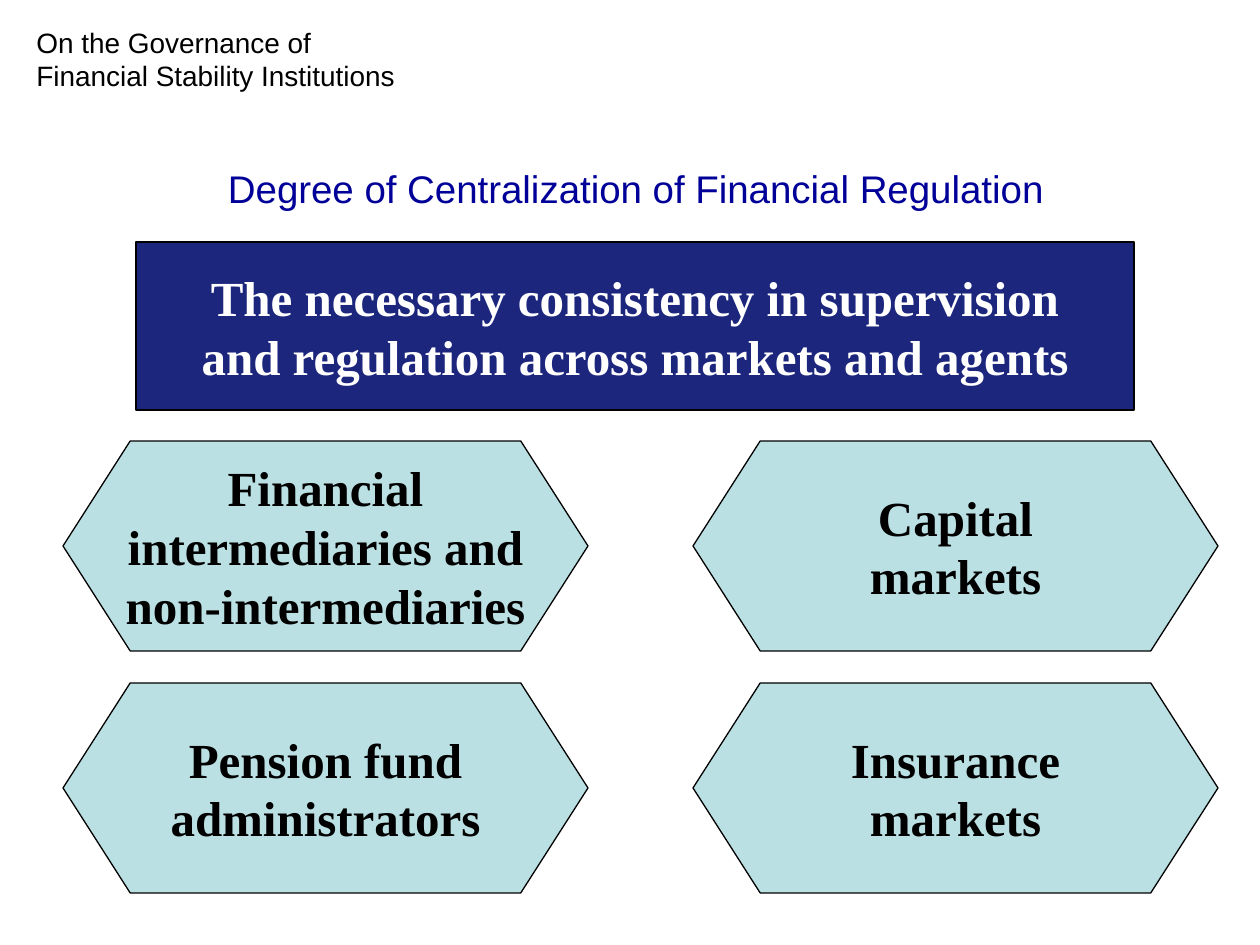
from dataclasses import dataclass

from pptx import Presentation
from pptx.dml.color import RGBColor
from pptx.enum.shapes import MSO_SHAPE
from pptx.enum.text import MSO_ANCHOR, MSO_AUTO_SIZE, PP_ALIGN
from pptx.util import Emu, Pt

EMU_PER_PX = 914400 / 126


@dataclass(frozen=True)
class Theme:
    sans: str = "Arial"
    serif: str = "Times New Roman"
    black: str = "000000"
    white: str = "FFFFFF"
    title: str = "000099"
    banner: str = "1C267D"
    sector: str = "BBE0E3"
    heading_size: int = 16
    title_size: int = 22
    box_size: int = 28
    line_width: float = 0.75


THEME = Theme()

SECTORS = [
    ["Financial\nintermediaries and\nnon-intermediaries", "Capital\nmarkets"],
    ["Pension fund\nadministrators", "Insurance\nmarkets"],
]


def px(n):
    return Emu(round(n * EMU_PER_PX))


def place(sp, box):
    sp.left, sp.top, sp.width, sp.height = map(px, box)


def format_text(tf, font, size, color, align, bold=False):
    for p in tf.paragraphs:
        p.alignment = align
        for r in p.runs:
            r.font.name = font
            r.font.size = Pt(size)
            r.font.bold = bold
            r.font.color.rgb = RGBColor.from_string(color)


def add_heading(slide, box):
    tf = slide.shapes.add_textbox(*map(px, box)).text_frame
    tf.word_wrap = True
    tf.auto_size = MSO_AUTO_SIZE.SHAPE_TO_FIT_TEXT
    tf.text = "On the Governance of Financial Stability Institutions"
    format_text(tf, THEME.sans, THEME.heading_size, THEME.black, PP_ALIGN.LEFT)


def set_title(slide, box):
    title = slide.shapes.title
    place(title, box)
    tf = title.text_frame
    tf.text = "Degree of Centralization of Financial Regulation"
    tf.word_wrap = True
    tf.auto_size = MSO_AUTO_SIZE.NONE
    tf.vertical_anchor = MSO_ANCHOR.BOTTOM
    tf.margin_bottom = px(13)
    format_text(tf, THEME.sans, THEME.title_size, THEME.title, PP_ALIGN.CENTER)


def add_label_box(slide, kind, box, text, fill, color):
    sp = slide.shapes.add_shape(kind, *map(px, box))
    sp.shadow.inherit = False
    sp.fill.solid()
    sp.fill.fore_color.rgb = RGBColor.from_string(fill)
    sp.line.color.rgb = RGBColor.from_string(THEME.black)
    sp.line.width = Pt(THEME.line_width)
    tf = sp.text_frame
    tf.text = text
    tf.word_wrap = False
    tf.vertical_anchor = MSO_ANCHOR.MIDDLE
    format_text(tf, THEME.serif, THEME.box_size, color, PP_ALIGN.CENTER, bold=True)
    return sp


def add_banner(slide, box):
    text = "The necessary consistency in supervision\nand regulation across markets and agents"
    add_label_box(slide, MSO_SHAPE.RECTANGLE, box, text, THEME.banner, THEME.white)


def add_sector_grid(slide, box, gap_x, gap_y):
    """Fill the box with equal hexagons, one for each entry in SECTORS."""
    left, top, width, height = box
    rows, cols = len(SECTORS), len(SECTORS[0])
    w = (width - gap_x * (cols - 1)) // cols
    h = (height - gap_y * (rows - 1)) // rows
    for i, row in enumerate(SECTORS):
        for j, text in enumerate(row):
            cell = (left + j * (w + gap_x), top + i * (h + gap_y), w, h)
            sp = add_label_box(slide, MSO_SHAPE.HEXAGON, cell, text, THEME.sector, THEME.black)
            sp.adjustments[0] = 0.32


def main():
    prs = Presentation()
    prs.slide_width, prs.slide_height = px(1260), px(945)
    slide = prs.slides.add_slide(prs.slide_layouts.get_by_name("Title Only"))
    set_title(slide, (53, 152, 1166, 72))
    add_heading(slide, (24, 19, 412, 81))
    add_banner(slide, (136, 242, 998, 168))
    add_sector_grid(slide, (63, 441, 1155, 452), gap_x=105, gap_y=32)
    prs.save("out.pptx")


if __name__ == "__main__":
    main()
